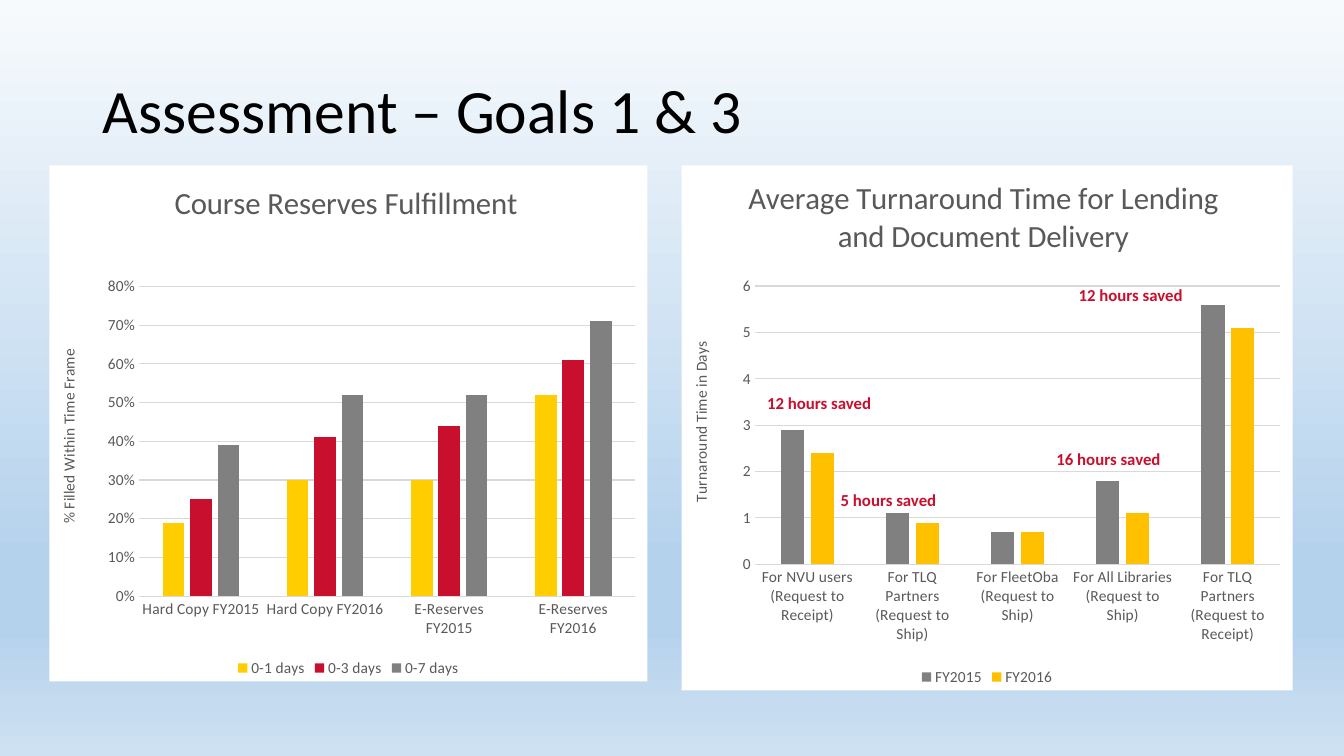
"""Build the assessment slide with two column charts and savings labels."""
import pptx
import pptx.chart.data
import pptx.dml.color
import pptx.enum.chart
import pptx.enum.text
import pptx.oxml
import pptx.oxml.ns
import pptx.util
from pptx.util import Inches, Pt

FONT = "Calibri"
GREY, RED, GRID = "595959", "C8102E", "D9D9D9"
TITLE = "Assessment – Goals 1 & 3"
BACKGROUND = [(0, "F7FAFD"), (74, "B5D2EC"), (83, "B5D2EC"), (100, "CEE1F2")]
CHARTS = [
    dict(
        at=(0.49, 1.64, 5.93, 5.12),
        title="Course Reserves Fulfillment",
        title_at=(0.2, 0.02),
        plot_at=(0.15, 0.235, 0.83, 0.6),
        value_title="% Filled Within Time Frame",
        value_title_at=(0.01, 0.35),
        top=0.8, step=0.1, number_format="0%", base_line=False,
        categories=["Hard Copy FY2015", "Hard Copy FY2016",
                    "E-Reserves FY2015", "E-Reserves FY2016"],
        series=[("0-1 days", "FFCD00", (0.19, 0.3, 0.3, 0.52)),
                ("0-3 days", RED, (0.25, 0.41, 0.44, 0.61)),
                ("0-7 days", "808080", (0.39, 0.52, 0.52, 0.71))],
    ),
    dict(
        at=(6.76, 1.64, 6.06, 5.21),
        title="Average Turnaround Time for Lending and Document Delivery",
        title_at=(0.1, 0.01),
        plot_at=(0.12, 0.23, 0.86, 0.53),
        value_title="Turnaround Time in Days",
        value_title_at=(0.01, 0.33),
        top=6, step=1, number_format="General", base_line=True,
        categories=["For NVU users (Request to Receipt)",
                    "For TLQ Partners (Request to Ship)",
                    "For FleetOba (Request to Ship)",
                    "For All Libraries (Request to Ship)",
                    "For TLQ Partners (Request to Receipt)"],
        series=[("FY2015", "808080", (2.9, 1.1, 0.7, 1.8, 5.6)),
                ("FY2016", "FFC000", (2.4, 0.9, 0.7, 1.1, 5.1))],
    ),
]
SAVINGS = [("5 hours saved", 8.24, 4.81), ("12 hours saved", 10.6, 2.78),
           ("16 hours saved", 10.38, 4.4), ("12 hours saved", 7.51, 3.85)]


def rgb(value):
    return pptx.dml.color.RGBColor.from_string(value)


def style(font, size, color, bold=False):
    font.name, font.size, font.bold = FONT, Pt(size), bold
    font.color.rgb = rgb(color)


def xml(tag, body):
    names = pptx.oxml.ns.nsdecls("a", "c", "p")
    return pptx.oxml.parse_xml(f"<{tag} {names}>{body}</{tag}>")


def set_background(s):
    stops = "".join(f'<a:gs pos="{pos * 1000}"><a:srgbClr val="{color}"/></a:gs>'
                    for pos, color in BACKGROUND)
    s._element.cSld.insert(0, xml("p:bg", (
        f'<p:bgPr><a:gradFill rotWithShape="1"><a:gsLst>{stops}</a:gsLst>'
        '<a:lin ang="5400000" scaled="0"/></a:gradFill><a:effectLst/></p:bgPr>')))


def set_layout(element, index, place, inner=False):
    for old in element.xpath("./c:layout"):
        element.remove(old)
    parts = '<c:layoutTarget val="inner"/>' if inner else ""
    parts += "".join(f'<c:{n}Mode val="edge"/>' for n in "xy")
    parts += "".join(f'<c:{n} val="{v}"/>' for n, v in zip("xywh", place))
    element.insert(index, xml("c:layout", f"<c:manualLayout>{parts}</c:manualLayout>"))


def set_title(owner, text, size):
    tf = owner.text_frame
    tf.text = text
    style(tf.paragraphs[0].runs[0].font, size, GREY)


def add_column_chart(s, item):
    data = pptx.chart.data.CategoryChartData(number_format=item["number_format"])
    data.categories = item["categories"]
    for name, _, values in item["series"]:
        data.add_series(name, values)
    chart = s.shapes.add_chart(
        pptx.enum.chart.XL_CHART_TYPE.COLUMN_CLUSTERED,
        *map(Inches, item["at"]), data).chart
    style(chart.font, 10, "000000")
    space = chart._chartSpace
    space.xpath("./c:txPr")[0].addprevious(xml("c:spPr", (
        '<a:solidFill><a:srgbClr val="FFFFFF"/></a:solidFill>'
        '<a:ln><a:noFill/></a:ln>')))

    chart.has_title = True
    set_title(chart.chart_title, item["title"], 22)
    set_layout(space.xpath("./c:chart/c:title")[0], 1, item["title_at"])
    set_layout(space.xpath("./c:chart/c:plotArea")[0], 0, item["plot_at"], True)

    chart.has_legend = True
    chart.legend.position = pptx.enum.chart.XL_LEGEND_POSITION.BOTTOM
    chart.legend.include_in_layout = False
    style(chart.legend.font, 11, GREY)

    plot = chart.plots[0]
    plot.gap_width, plot.overlap, plot.vary_by_categories = 219, -27, False
    for series, (_, color, _) in zip(plot.series, item["series"]):
        series.format.fill.solid()
        series.format.fill.fore_color.rgb = rgb(color)

    cat, val = chart.category_axis, chart.value_axis
    for axis in (cat, val):
        axis.major_tick_mark = pptx.enum.chart.XL_TICK_MARK.NONE
        axis.minor_tick_mark = pptx.enum.chart.XL_TICK_MARK.NONE
        axis.format.line.fill.background()
        style(axis.tick_labels.font, 11, GREY)
    lines = [val.major_gridlines.format.line]
    if item["base_line"]:
        lines.append(cat.format.line)
    for line in lines:
        line.color.rgb, line.width = rgb(GRID), Pt(0.75)
    val.minimum_scale, val.maximum_scale, val.major_unit = 0, item["top"], item["step"]
    val.tick_labels.number_format = item["number_format"]
    val.tick_labels.number_format_is_linked = False
    set_title(val.axis_title, item["value_title"], 11)
    val_title = space.xpath(".//c:valAx/c:title")[0]
    set_layout(val_title, 1, item["value_title_at"])
    body = val_title.xpath(".//a:bodyPr")[0]
    body.set("rot", "-5400000")
    body.set("vert", "horz")


def main():
    prs = pptx.Presentation()
    prs.slide_width, prs.slide_height = Inches(13.33), Inches(7.5)
    s = prs.slides.add_slide(prs.slide_layouts[5])
    set_background(s)

    title = s.shapes.title
    title.left, title.top, title.width, title.height = map(Inches, (0.92, 0.4, 11.5, 1.45))
    tf = title.text_frame
    tf.text = TITLE
    tf.vertical_anchor = pptx.enum.text.MSO_ANCHOR.MIDDLE
    p = tf.paragraphs[0]
    p.alignment, p.line_spacing = pptx.enum.text.PP_ALIGN.LEFT, 0.9
    style(p.runs[0].font, 44, "000000")

    for item in CHARTS:
        add_column_chart(s, item)

    for text, left, top in SAVINGS:
        tf = s.shapes.add_textbox(*map(Inches, (left, top, 1.27, 0.3))).text_frame
        tf.text = text
        tf.word_wrap = True
        tf.auto_size = pptx.enum.text.MSO_AUTO_SIZE.SHAPE_TO_FIT_TEXT
        style(tf.paragraphs[0].runs[0].font, 12, RED, True)

    prs.save("out.pptx")


if __name__ == "__main__":
    main()
